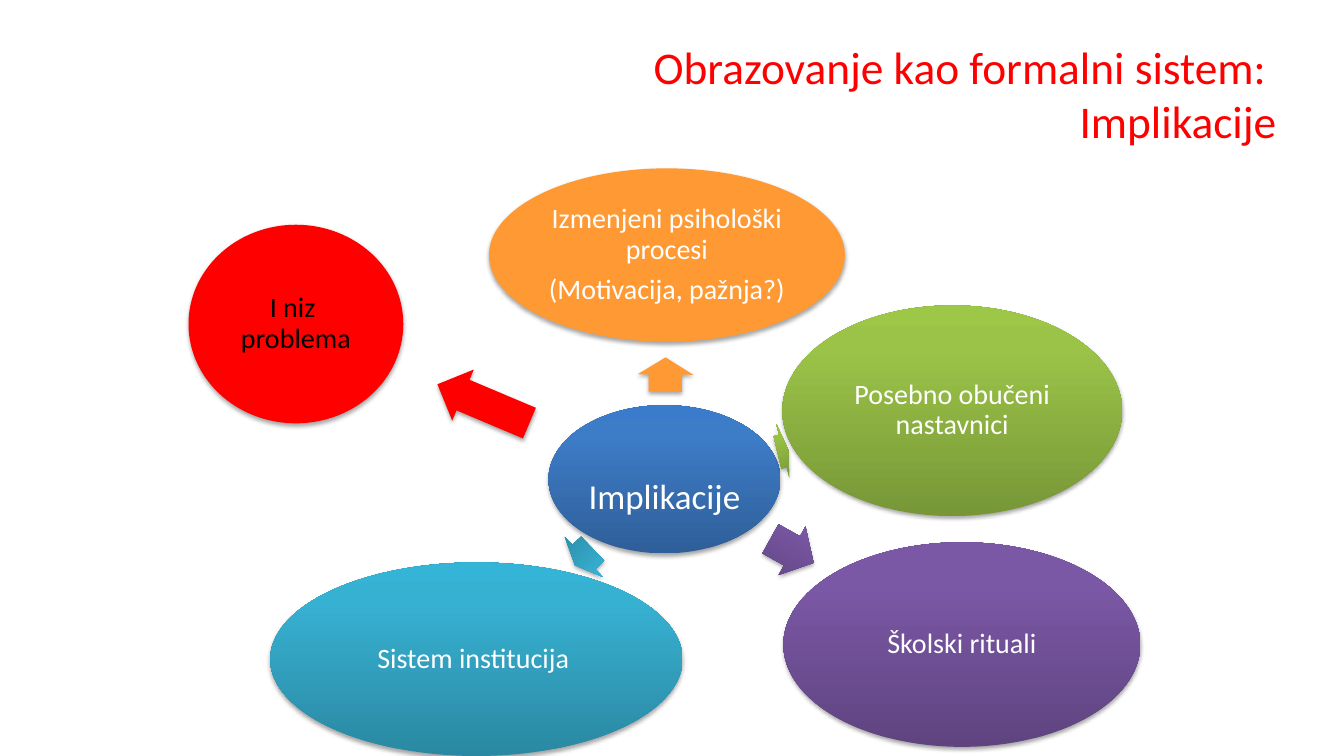
from copy import deepcopy

from lxml import etree
from pptx import Presentation
from pptx import util as u
from pptx.dml.color import RGBColor
from pptx.enum import shapes, text
from pptx.oxml.ns import qn


def colour(code):
    return RGBColor.from_string(code)


class CyclePage:
    """Holds the deck style and the slide being drawn."""

    font = "Calibri"
    inset = u.Inches(0.03)

    def __init__(self, deck):
        self.page = deck.slides.add_slide(deck.slide_layouts[5])

    def format_text(self, frame, align, size, code):
        frame.word_wrap = True
        frame.auto_size = text.MSO_AUTO_SIZE.NONE
        frame.vertical_anchor = text.MSO_ANCHOR.MIDDLE
        for para in frame.paragraphs:
            para.alignment = align
            for span in para.runs:
                span.font.name = self.font
                span.font.size = u.Pt(size)
                span.font.color.rgb = colour(code)

    def title(self, box, words, size, code):
        title = self.page.shapes.title
        title.left, title.top, title.width, title.height = map(u.Inches, box)
        title.text_frame.text = words
        self.format_text(title.text_frame, text.PP_ALIGN.RIGHT, size, code)

    def paint(self, shape, codes):
        """Fill with one colour, or with a bottom-to-top gradient of three."""
        shape.line.fill.background()
        if len(codes) == 1:
            shape.fill.solid()
            shape.fill.fore_color.rgb = colour(codes[0])
        else:
            shape.fill.gradient()
            shape.fill.gradient_angle = 90
            stop_list = shape.element.spPr.find(".//" + qn("a:gsLst"))
            stop_list.append(deepcopy(stop_list[-1]))
            for stop, place, code in zip(shape.fill.gradient_stops, (0, 0.8, 1), codes):
                stop.position = place
                stop.color.rgb = colour(code)
        self.cast_shadow(shape)

    def cast_shadow(self, shape):
        shape.shadow.inherit = False
        effects = shape.element.spPr.find(qn("a:effectLst"))
        shadow = etree.SubElement(
            effects, qn("a:outerShdw"), blurRad=str(u.Pt(3.1)), dist=str(u.Pt(1.8)),
            dir="5400000", rotWithShape="0")
        black = etree.SubElement(shadow, qn("a:srgbClr"), val="000000")
        etree.SubElement(black, qn("a:alpha"), val="35000")

    def ellipse(self, box, words, codes, size=20, ink="FFFFFF"):
        shape = self.page.shapes.add_shape(shapes.MSO_SHAPE.OVAL, *map(u.Inches, box))
        self.paint(shape, codes)
        frame = shape.text_frame
        frame.margin_left = frame.margin_right = self.inset
        frame.margin_top = frame.margin_bottom = self.inset
        frame.text = words
        self.format_text(frame, text.PP_ALIGN.CENTER, size, ink)
        for para in frame.paragraphs:
            para.line_spacing = 0.9
            para.space_after = u.Pt(0.35 * size)

    def arrow(self, left, top, width, turn, codes):
        box = map(u.Inches, (left, top, width, 0.55))
        shape = self.page.shapes.add_shape(shapes.MSO_SHAPE.RIGHT_ARROW, *box)
        shape.adjustments[0], shape.adjustments[1] = 0.6, 0.5
        shape.rotation = turn
        self.paint(shape, codes)


BLUE = ("2F5F99", "3D7CC7", "3A7CCB")
ORANGE = ("FF9933",)
GREEN = ("779737", "9BC348", "9DC746")
PURPLE = ("5F4480", "7B58A6", "7C57A8")
TEAL = ("2A88A2", "37B1D2", "34B4D6")
RED = ("FF0000",)

# arrow (left, top, width, turn), ellipse box, words, fill, text colour
IMPLICATIONS = [
    ((6.43, 3.44, 0.34, 270.6), (4.85, 1.67, 3.53, 1.72),
     "Izmenjeni psihološki procesi\n(Motivacija, pažnja?)", ORANGE, "FFFFFF"),
    ((7.71, 4.2, 0.11, 346.5), (7.76, 3.03, 3.37, 2.09),
     "Posebno obučeni nastavnici", GREEN, "FFFFFF"),
    ((7.61, 5.19, 0.49, 29.1), (7.77, 5.38, 3.54, 2.03),
     "Školski rituali", PURPLE, "FFFFFF"),
    ((5.67, 5.25, 0.24, 136.5), (2.68, 5.58, 4.09, 1.92),
     "Sistem institucija ", TEAL, "FFFFFF"),
    ((4.3, 3.73, 0.99, 202.9), (1.87, 2.23, 2.13, 1.97),
     "I niz  problema", RED, "000000"),
]


def main():
    deck = Presentation()
    deck.slide_width, deck.slide_height = u.Inches(13.33), u.Inches(7.5)
    cycle = CyclePage(deck)
    cycle.title((0.72, 0.37, 12.04, 1.11),
                "Obrazovanje kao formalni sistem: \vImplikacije", 32.4, "FF0000")
    cycle.ellipse((5.44, 4.02, 2.3, 1.47), " Implikacije", BLUE, size=25)
    for arrow, box, words, codes, ink in IMPLICATIONS:
        cycle.arrow(*arrow, codes)
        cycle.ellipse(box, words, codes, ink=ink)
    deck.save("out.pptx")


if __name__ == "__main__":
    main()
